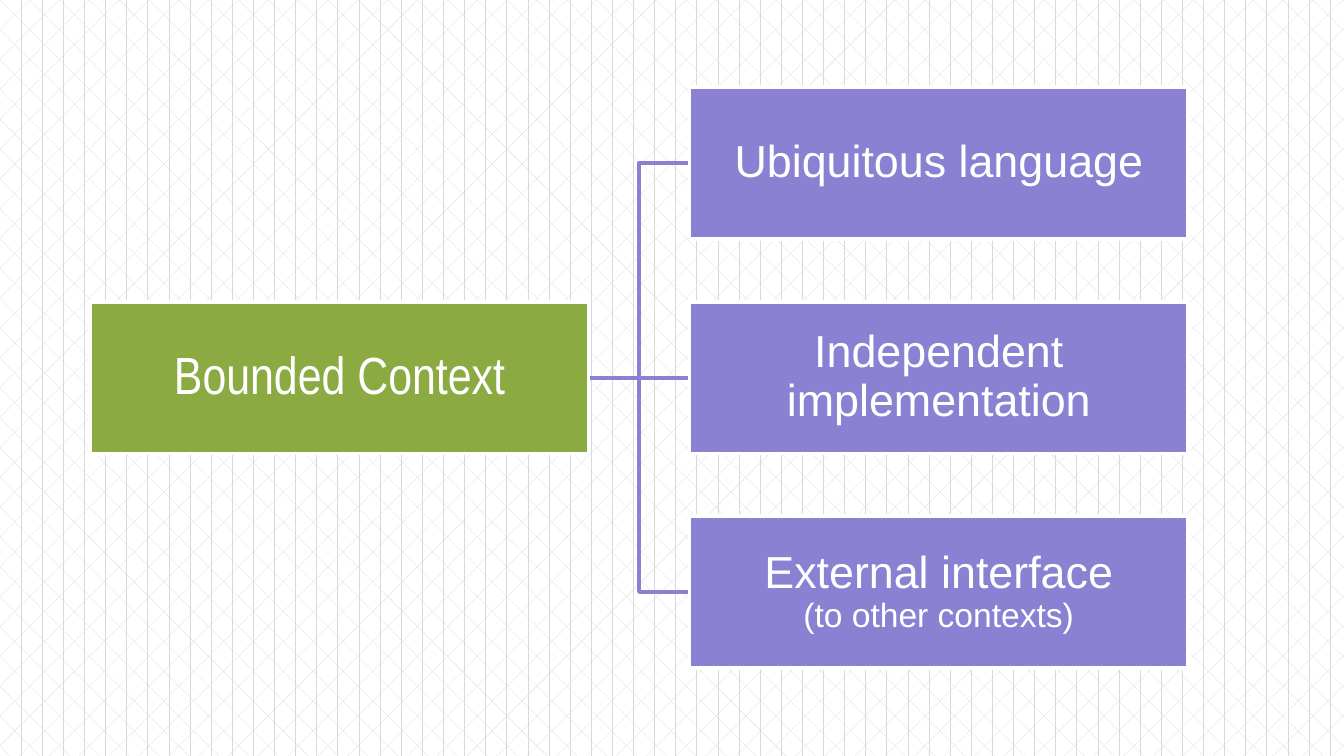
from lxml import etree
from pptx import Presentation, util as u
from pptx.dml.color import RGBColor
from pptx.enum import dml, shapes, text
from pptx.oxml.ns import qn

WHITE = RGBColor(0xFF, 0xFF, 0xFF)
GREY = RGBColor(0xD9, 0xD9, 0xD9)
GREEN = RGBColor(0x8B, 0xAB, 0x42)
PURPLE = RGBColor(0x8B, 0x81, 0xD2)

WIDE, HIGH = 3.71, 1.13
LEFT, RIGHT = 0.67, 5.13
TOP, LAST = 0.65, 3.84
STEP = (LAST - TOP) / 2


class Board:
    """Holds the style and the current slide."""
    line = u.Pt(2)
    inset = u.Inches(0.02)

    def __init__(self, slide):
        self.slide = slide

    def backdrop(self):
        fill = self.slide.background.fill
        fill.patterned()
        fill.pattern = dml.MSO_PATTERN.DIVOT
        fill.fore_color.rgb = GREY
        fill.back_color.rgb = WHITE

    def stroke(self, item, color):
        item.line.color.rgb = color
        item.line.width = self.line

    def lower(self, item):
        """Send an item behind all others."""
        self.slide.shapes._spTree.insert(2, item._element)

    def box(self, left, top, color, label, size, font="Arial", note=None):
        box = self.slide.shapes.add_shape(
            shapes.MSO_SHAPE.RECTANGLE, u.Inches(left), u.Inches(top),
            u.Inches(WIDE), u.Inches(HIGH))
        box.shadow.inherit = False
        box.fill.solid()
        box.fill.fore_color.rgb = color
        self.stroke(box, WHITE)
        frame = box.text_frame
        frame.word_wrap = True
        frame.vertical_anchor = text.MSO_ANCHOR.MIDDLE
        frame.margin_left = frame.margin_right = self.inset
        frame.margin_top = frame.margin_bottom = self.inset
        para = frame.paragraphs[0]
        para.alignment = text.PP_ALIGN.CENTER
        para.line_spacing = 0.9
        para.font.name = font
        para.font.size = u.Pt(size)
        para.font.color.rgb = WHITE
        para.add_run().text = label
        if note:
            para.add_line_break()
            run = para.add_run()
            run.text = note
            run.font.size = u.Pt(18)
        return box

    def straight(self, start, end):
        link = self.slide.shapes.add_connector(
            shapes.MSO_CONNECTOR.STRAIGHT, 0, 0, 0, 0)
        link.begin_connect(start, 3)
        link.end_connect(end, 1)
        self.stroke(link, PURPLE)
        etree.SubElement(link._element.spPr, qn("a:effectLst"))
        self.lower(link)

    def elbow(self, start, end):
        x, y = start.left + start.width, start.top + start.height // 2
        far, level = end.left, end.top + end.height // 2
        mid = (x + far) // 2
        path = self.slide.shapes.build_freeform(x, y)
        path.add_line_segments([(mid, y), (mid, level), (far, level)], close=False)
        bend = path.convert_to_shape()
        bend.shadow.inherit = False
        bend.fill.background()
        self.stroke(bend, PURPLE)
        self.lower(bend)


def main():
    deck = Presentation()
    # Widescreen, 16 to 9
    deck.slide_width = u.Inches(10)
    deck.slide_height = deck.slide_width * 9 // 16
    board = Board(deck.slides.add_slide(deck.slide_layouts[6]))
    board.backdrop()

    # Root and its three parts
    root = board.box(LEFT, TOP + STEP, GREEN, "Bounded Context", 28, "Arial Narrow")
    parts = [("Ubiquitous language", None),
             ("Independent implementation", None),
             ("External interface", "(to other contexts)")]
    leaves = [board.box(RIGHT, TOP + row * STEP, PURPLE, label, 24, note=note)
              for row, (label, note) in enumerate(parts)]

    # Links from the root, behind the boxes
    upper, middle, lower = leaves
    board.elbow(root, upper)
    board.straight(root, middle)
    board.elbow(root, lower)

    deck.save("out.pptx")


if __name__ == "__main__":
    main()
